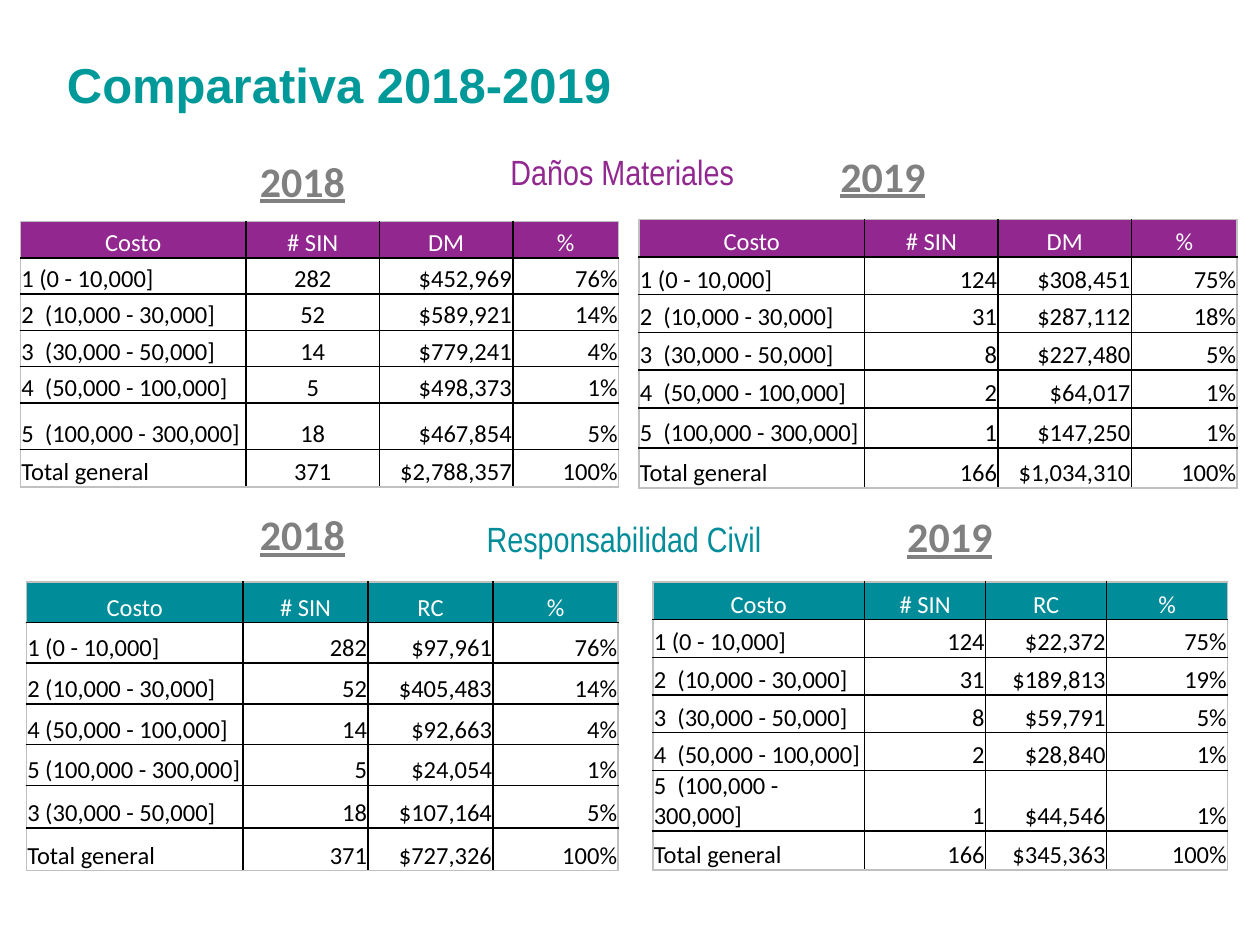
"""Build the 2018-2019 claims comparison slide with its four cost tables."""
import pptx
import pptx.dml.color
import pptx.enum.text
import pptx.oxml
import pptx.oxml.ns
import pptx.util

Cm, Pt = pptx.util.Cm, pptx.util.Pt
RGB = pptx.dml.color.RGBColor.from_string
ALIGN = pptx.enum.text.PP_ALIGN
LEFT, CENTER, RIGHT = ALIGN.LEFT, ALIGN.CENTER, ALIGN.RIGHT

THEME = {
    "purple": "91278F", "teal": "008C99", "white": "FFFFFF", "black": "000000",
    "grid": "000000", "frame": "C0C0C0", "cell_font": "Calibri", "cell_size": 14,
    "title": {"font": "Arial", "size": 28, "color": "009999", "bold": True},
    "year": {"font": "Calibri", "size": 24, "color": "808080", "bold": True, "underline": True},
    "damage": {"font": "Arial Narrow", "size": 20, "color": "91278F"},
    "liability": {"font": "Arial Narrow", "size": 20, "color": "008C99"},
}

TEXTS = [
    ("Comparativa 2018-2019", "title", (1.22, 0.97, 13.46, 1.45)),
    ("2018", "year", (5.11, 3.0, 4.22, 1.27)),
    ("Daños Materiales", "damage", (10.16, 2.9, 4.88, 1.12)),
    ("2019", "year", (16.81, 2.9, 4.22, 1.27)),
    ("2018", "year", (5.11, 10.13, 4.22, 1.27)),
    ("Responsabilidad Civil", "liability", (9.68, 10.31, 6.4, 1.12)),
    ("2019", "year", (18.16, 10.16, 2.92, 1.27)),
]

RANGES = ["1 (0 - 10,000]", "2  (10,000 - 30,000]", "3  (30,000 - 50,000]",
          "4  (50,000 - 100,000]", "5  (100,000 - 300,000]", "Total general"]
RANGES_RC_2018 = ["1 (0 - 10,000]", "2 (10,000 - 30,000]", "4 (50,000 - 100,000]",
                  "5 (100,000 - 300,000]", "3 (30,000 - 50,000]", "Total general"]
CLAIMS_2018 = ["282", "52", "14", "5", "18", "371"]
CLAIMS_2019 = ["124", "31", "8", "2", "1", "166"]
SHARE_2018 = ["76%", "14%", "4%", "1%", "5%", "100%"]
DM_COLS = [4.55, 2.69, 2.69, 2.13]

TABLES = [
    {"at": (0.41, 4.47), "cols": DM_COLS, "rows": [0.73] * 5 + [0.94, 0.76],
     "fill": "purple", "amount": "DM", "claims_align": CENTER,
     "data": [RANGES, CLAIMS_2018,
              ["$452,969", "$589,921", "$779,241", "$498,373", "$467,854", "$2,788,357"],
              SHARE_2018]},
    {"at": (12.88, 4.42), "cols": DM_COLS, "rows": [0.76] * 5 + [0.81] * 2,
     "fill": "purple", "amount": "DM", "claims_align": RIGHT,
     "data": [RANGES, CLAIMS_2019,
              ["$308,451", "$287,112", "$227,480", "$64,017", "$147,250", "$1,034,310"],
              ["75%", "18%", "5%", "1%", "1%", "100%"]]},
    {"at": (0.53, 11.73), "cols": [4.37] + [2.52] * 3, "rows": [0.82] * 5 + [0.86] * 2,
     "fill": "teal", "amount": "RC", "claims_align": RIGHT,
     "data": [RANGES_RC_2018, CLAIMS_2018,
              ["$97,961", "$405,483", "$92,663", "$24,054", "$107,164", "$727,326"],
              SHARE_2018]},
    {"at": (13.16, 11.73), "cols": [4.27] + [2.44] * 3, "rows": [0.76] * 5 + [0.79] * 2,
     "fill": "teal", "amount": "RC", "claims_align": RIGHT,
     "data": [RANGES, CLAIMS_2019,
              ["$22,372", "$189,813", "$59,791", "$28,840", "$44,546", "$345,363"],
              ["75%", "19%", "5%", "1%", "1%", "100%"]]},
]


def add_text(s, text, style, box):
    look = THEME[style]
    tf = s.shapes.add_textbox(*map(Cm, box)).text_frame
    tf.word_wrap = True
    tf.margin_left = tf.margin_right = tf.margin_top = tf.margin_bottom = Cm(0.13)
    p = tf.paragraphs[0]
    p.text = text
    p.font.name, p.font.size = look["font"], Pt(look["size"])
    p.font.bold = look.get("bold", False)
    p.font.underline = look.get("underline", False)
    p.font.color.rgb = RGB(look["color"])


def set_borders(cell, outer):
    tc_pr = cell._tc.get_or_add_tcPr()
    for i, (side, on_frame) in enumerate(zip("LRTB", outer)):
        color = THEME["frame" if on_frame else "grid"]
        tc_pr.insert(i, pptx.oxml.parse_xml(
            f'<a:ln{side} {pptx.oxml.ns.nsdecls("a")} w="12700"><a:solidFill>'
            f'<a:srgbClr val="{color}"/></a:solidFill></a:ln{side}>'))


def fill_cell(cell, text, align, fill, color):
    cell.margin_left = cell.margin_right = cell.margin_top = Cm(0.02)
    cell.margin_bottom = 0
    cell.vertical_anchor = pptx.enum.text.MSO_ANCHOR.BOTTOM
    cell.fill.solid()
    cell.fill.fore_color.rgb = RGB(THEME[fill])
    p = cell.text_frame.paragraphs[0]
    p.text = text
    p.alignment = align
    p.font.name, p.font.size = THEME["cell_font"], Pt(THEME["cell_size"])
    p.font.bold = False
    p.font.color.rgb = RGB(THEME[color])


def add_cost_table(s, spec):
    cols, rows = spec["cols"], spec["rows"]
    size = (sum(cols), sum(rows))
    table = s.shapes.add_table(len(rows), len(cols), *map(Cm, spec["at"] + size)).table
    table.first_row = table.horz_banding = False
    for column, width in zip(table.columns, cols):
        column.width = Cm(width)
    for row, height in zip(table.rows, rows):
        row.height = Cm(height)
    header = ("Costo", "# SIN", spec["amount"], "%")
    aligns = (LEFT, spec["claims_align"], RIGHT, RIGHT)
    for i, values in enumerate([header, *zip(*spec["data"])]):
        for j, text in enumerate(values):
            cell = table.cell(i, j)
            if i == 0:
                fill_cell(cell, text, CENTER, spec["fill"], "white")
            else:
                fill_cell(cell, text, aligns[j], "white", "black")
            set_borders(cell, (j == 0, j == len(cols) - 1, i == 0, i == len(rows) - 1))


def main():
    prs = pptx.Presentation()
    prs.slide_width, prs.slide_height = Cm(25.4), Cm(19.05)
    s = prs.slides.add_slide(prs.slide_layouts[6])
    for spec in TABLES:
        add_cost_table(s, spec)
    for text, style, box in TEXTS:
        add_text(s, text, style, box)
    prs.save("out.pptx")


if __name__ == "__main__":
    main()
